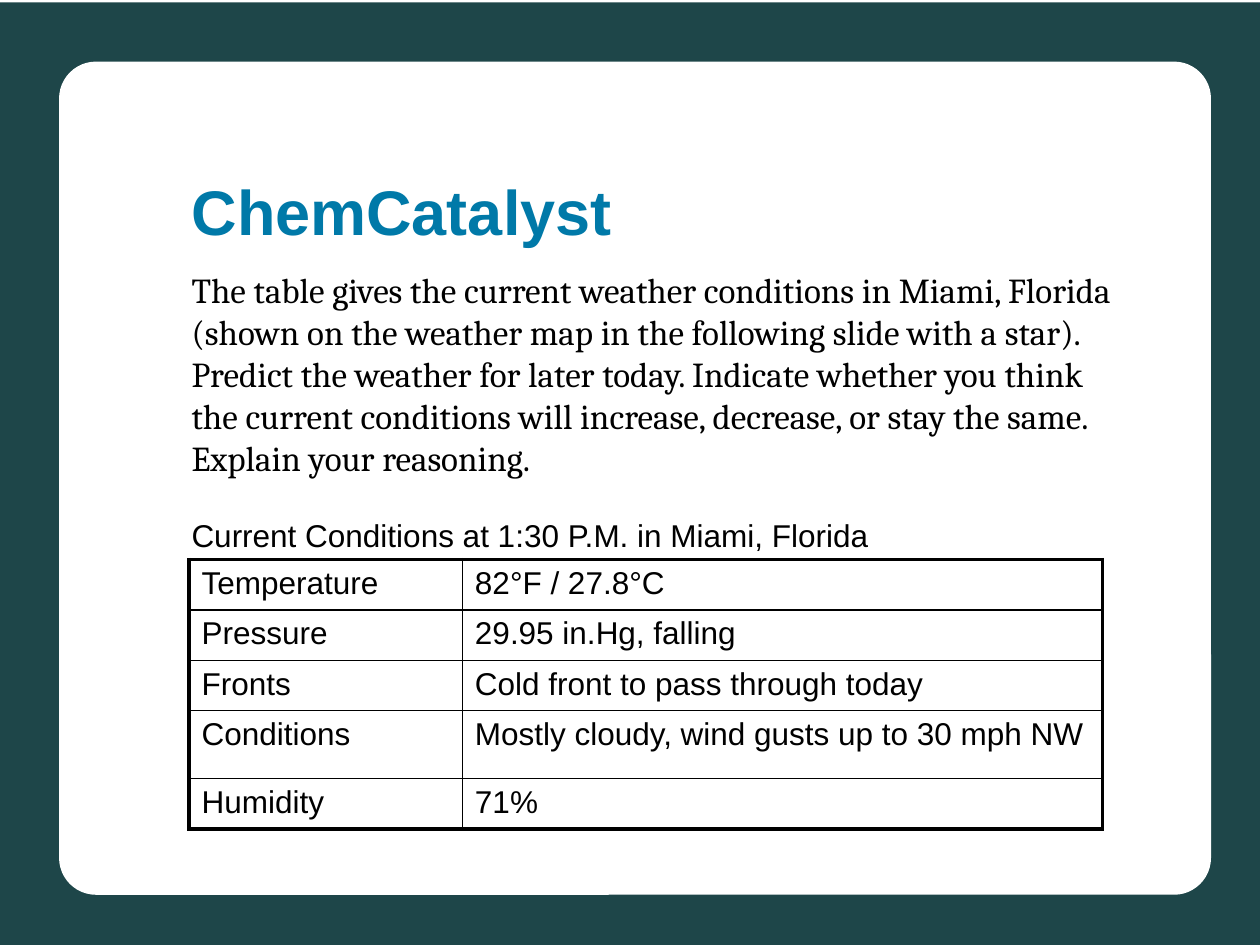
from lxml import etree
from pptx import Presentation, util as u
from pptx.dml.color import RGBColor
from pptx.enum import shapes, text
from pptx.oxml import ns

TEAL = RGBColor(0x1E, 0x46, 0x49)
BLUE = RGBColor(0x00, 0x79, 0xA8)
WHITE = RGBColor(0xFF, 0xFF, 0xFF)
BLACK = RGBColor(0x00, 0x00, 0x00)
LEFT = 1.42
THIN, THICK = 1, 2.25
COLUMNS = [2.17, 5.08]
ROWS = [0.4, 0.4, 0.4, 0.54, 0.4]
PROMPT = (
    "The table gives the current weather conditions in Miami, Florida "
    "(shown on the weather map in the following slide with a star). "
    "Predict the weather for later today. Indicate whether you think "
    "the current conditions will increase, decrease, or stay the same. "
    "Explain your reasoning."
)
CAPTION = "Current Conditions at 1:30 P.M. in Miami, Florida"
CONDITIONS = [
    ("Temperature", "82°F / 27.8°C"),
    ("Pressure", "29.95 in.Hg, falling"),
    ("Fronts", "Cold front to pass through today"),
    ("Conditions", "Mostly cloudy, wind gusts up to 30 mph NW"),
    ("Humidity", "71%"),
]


def inches(*values):
    return [u.Inches(v) for v in values]


def add_panel(s, kind, box, color, depth):
    sp = s.shapes.add_shape(kind, *inches(*box))
    sp.shadow.inherit = False
    sp.fill.solid()
    sp.fill.fore_color.rgb = color
    sp.line.fill.background()
    s.shapes._spTree.insert(2 + depth, sp._element)
    return sp


def place(sp, box, anchor):
    sp.left, sp.top, sp.width, sp.height = inches(*box)
    tf = sp.text_frame
    tf.word_wrap = True
    tf.auto_size = text.MSO_AUTO_SIZE.NONE
    tf.vertical_anchor = anchor
    return tf


def write(p, words, size, font="Arial", color=BLACK, bold=False, before=0):
    p.text = words
    p.alignment = text.PP_ALIGN.LEFT
    p.space_before = u.Pt(before)
    p.font.size = u.Pt(size)
    p.font.name = font
    p.font.bold = bold
    p.font.color.rgb = color


def remove_bullet(p):
    pPr = p._p.get_or_add_pPr()
    pPr.set("marL", "0")
    pPr.set("indent", "0")
    pPr.insert_element_before(
        pPr.makeelement(ns.qn("a:buNone")), "a:tabLst", "a:defRPr", "a:extLst"
    )


def set_borders(cell, widths):
    tcPr = cell._tc.get_or_add_tcPr()
    for i, (side, width) in enumerate(zip("LRTB", widths)):
        ln = etree.Element(ns.qn(f"a:ln{side}"), w=str(u.Pt(width)))
        fill = etree.SubElement(ln, ns.qn("a:solidFill"))
        etree.SubElement(fill, ns.qn("a:srgbClr"), val=str(BLACK))
        tcPr.insert(i, ln)


def add_conditions(s):
    box = inches(1.5, 4.44, sum(COLUMNS), sum(ROWS))
    table = s.shapes.add_table(len(ROWS), len(COLUMNS), *box).table
    table.first_row = table.horz_banding = False
    for column, width in zip(table.columns, COLUMNS):
        column.width = u.Inches(width)
    last_row, last_col = len(ROWS) - 1, len(COLUMNS) - 1
    for r, (height, values) in enumerate(zip(ROWS, CONDITIONS)):
        table.rows[r].height = u.Inches(height)
        for c, value in enumerate(values):
            cell = table.cell(r, c)
            cell.fill.background()
            write(cell.text_frame.paragraphs[0], value, 18)
            outer = (c == 0, c == last_col, r == 0, r == last_row)
            set_borders(cell, [THICK if edge else THIN for edge in outer])


def main():
    """Build the weather prediction slide."""
    prs = Presentation()
    prs.slide_width, prs.slide_height = inches(10, 7.5)
    s = prs.slides.add_slide(prs.slide_layouts[1])
    kinds = shapes.MSO_SHAPE
    add_panel(s, kinds.RECTANGLE, (0, 0.02, 10, 7.5), TEAL, 0)
    card = add_panel(s, kinds.ROUNDED_RECTANGLE, (0.5, 0.52, 9.08, 6.55), WHITE, 1)
    card.adjustments[0] = 0.04
    card.line.color.rgb = WHITE
    card.line.width = u.Pt(4.5)

    title = place(s.shapes.title, (LEFT, 1.17, 8.08, 1), text.MSO_ANCHOR.MIDDLE)
    write(title.paragraphs[0], "ChemCatalyst", 36, color=BLUE, bold=True)
    body = place(s.placeholders[1], (LEFT, 2.08, 7.5, 4.42), text.MSO_ANCHOR.TOP)
    write(body.paragraphs[0], PROMPT, 20, font="Cambria")
    write(body.add_paragraph(), CAPTION, 18, before=21.5)
    for p in body.paragraphs:
        remove_bullet(p)
    add_conditions(s)
    prs.save("out.pptx")


if __name__ == "__main__":
    main()
